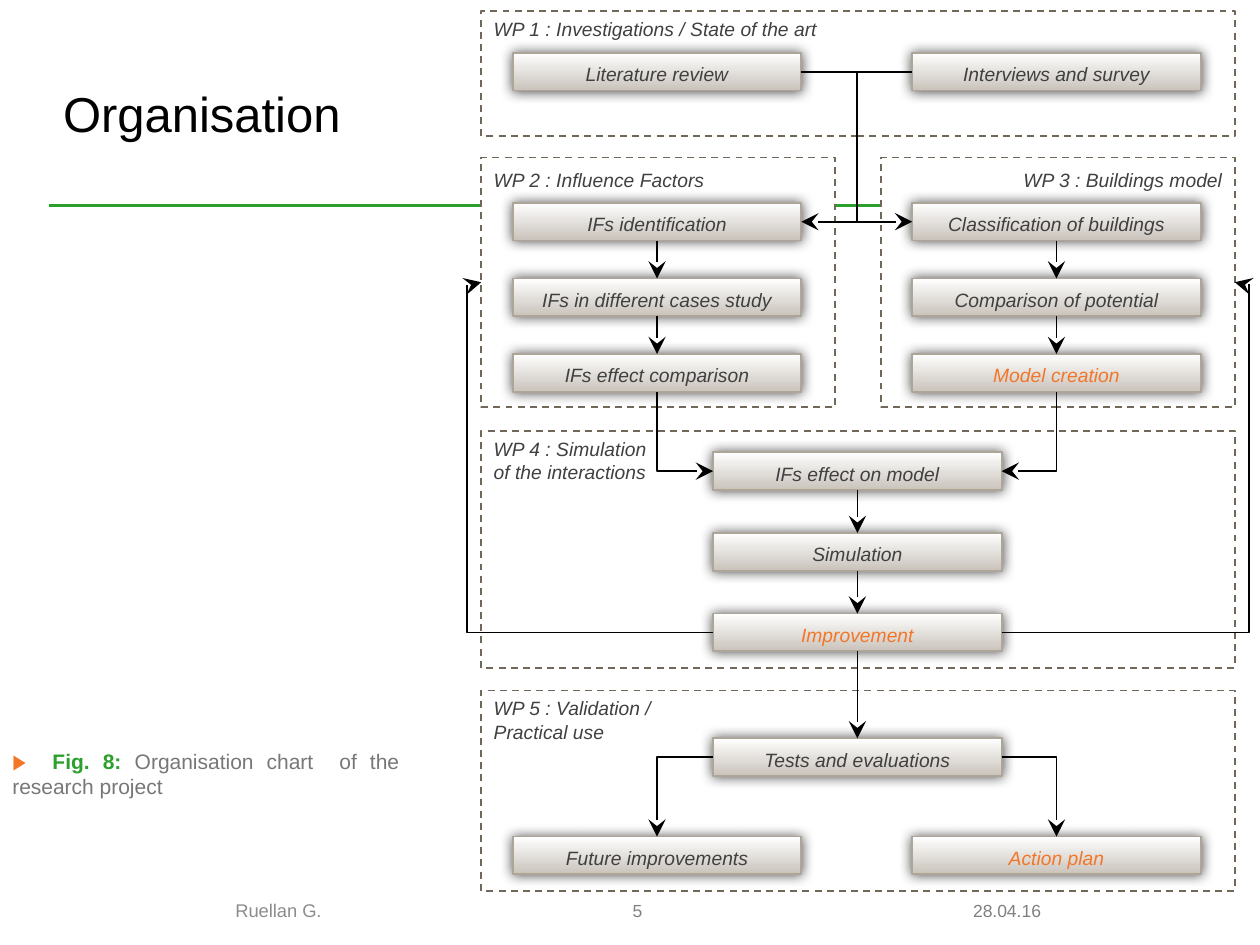
from lxml import etree
from pptx import Presentation
from pptx.dml.color import RGBColor
from pptx.enum.dml import MSO_LINE
from pptx.enum.shapes import MSO_CONNECTOR, MSO_SHAPE
from pptx.enum.text import MSO_ANCHOR, PP_ALIGN
from pptx.oxml.ns import qn
from pptx.util import Inches, Pt

STRAIGHT, ELBOW = MSO_CONNECTOR.STRAIGHT, MSO_CONNECTOR.ELBOW
RECT, DASH = MSO_SHAPE.RECTANGLE, MSO_LINE.DASH
TOP, MIDDLE = MSO_ANCHOR.TOP, MSO_ANCHOR.MIDDLE
LEFT, CENTER, RIGHT, JUSTIFY = (PP_ALIGN.LEFT, PP_ALIGN.CENTER,
                                PP_ALIGN.RIGHT, PP_ALIGN.JUSTIFY)
UP_SIDE, LEFT_SIDE, DOWN_SIDE, RIGHT_SIDE = range(4)

COLORS = {
    "black": "000000", "white": "FFFFFF", "text": "404040", "orange": "F37628",
    "green": "2CA02C", "frame": "71685A", "box edge": "ADA598",
    "box base": "C9C3BB", "footer": "808080", "author": "8C8C8C",
    "caption": "777777",
}
COLORS = {name: RGBColor.from_string(value) for name, value in COLORS.items()}

prs = Presentation()
prs.slide_width, prs.slide_height = Inches(10), Inches(7.5)
slide = prs.slides.add_slide(prs.slide_layouts[5])
shapes = slide.shapes


def write(paragraph, text, size, color, **formats):
    run = paragraph.add_run()
    run.text = text
    run.font.color.rgb = COLORS[color]
    for key, value in {"name": "Arial", "size": Pt(size), **formats}.items():
        setattr(run.font, key, value)


def connect(kind, begin, end, arrow="tailEnd", color="black", width=1,
            preset=None, bend=None):
    """Ends are (x, y) in inches, or (shape, side) to join a rectangle."""
    points = [(0, 0) if hasattr(p[0], "text_frame") else p for p in (begin, end)]
    link = shapes.add_connector(kind, *[Inches(v) for p in points for v in p])
    if hasattr(begin[0], "text_frame"):
        link.begin_connect(*begin)
    if hasattr(end[0], "text_frame"):
        link.end_connect(*end)
    link.line.color.rgb = COLORS[color]
    link.line.width = Pt(width)
    props = link._element.spPr
    geometry = props.find(qn("a:prstGeom"))
    if preset:
        geometry.set("prst", preset)
    if bend:
        guide = etree.SubElement(geometry.find(qn("a:avLst")), qn("a:gd"))
        guide.set("name", "adj1")
        guide.set("fmla", f"val {bend}")
    if arrow:
        tip = etree.SubElement(props.find(qn("a:ln")), qn("a:" + arrow))
        for key, value in {"type": "stealth", "w": "lg", "len": "lg"}.items():
            tip.set(key, value)
    etree.SubElement(props, qn("a:effectLst"))


# Title and the rule below it
title = shapes.title
title.left, title.top = Inches(0.5), Inches(0.3)
title.width, title.height = Inches(7.97), Inches(1.25)
frame = title.text_frame
for key in ("margin_left", "margin_top", "margin_right", "margin_bottom"):
    setattr(frame, key, 0)
frame.vertical_anchor = MIDDLE
frame.paragraphs[0].alignment = LEFT
frame.paragraphs[0].line_spacing = 0.88
write(frame.paragraphs[0], "Organisation", 28, "black")
connect(STRAIGHT, (0.39, 1.63), (9.65, 1.63), None, "green", 1.42)

# Footer and figure caption
CAPTION = [("▶  ", "orange", True), ("Fig. 8: ", "green", True),
           ("Organisation chart  of the research project", "caption", False)]
for x, y, w, h, align, size, runs in [
    (6.2, 7.09, 2.16, 0.28, RIGHT, 10, [("28.04.16", "footer", False)]),
    (3.98, 7.09, 2.16, 0.28, CENTER, 10, [("5", "footer", False)]),
    (1.77, 7.09, 2.34, 0.28, LEFT, 10.5, [("Ruellan G.", "author", False)]),
    (0, 5.89, 3.27, 0.5, JUSTIFY, 12, CAPTION),
]:
    note = shapes.add_textbox(*map(Inches, (x, y, w, h))).text_frame
    note.word_wrap = True
    note.paragraphs[0].alignment = align
    for text, color, bold in runs:
        write(note.paragraphs[0], text, size, color, bold=bold)

# Dashed work package frames
packages = {}
for number, x, y, w, h, align, spacing, lines in [
    (4, 3.82, 3.42, 5.98, 1.88, JUSTIFY, 1,
     ["WP 4 : Simulation", "of the interactions"]),
    (5, 3.82, 5.48, 5.98, 1.59, JUSTIFY, 1,
     ["WP 5 : Validation /", "Practical use"]),
    (3, 6.99, 1.25, 2.81, 1.98, RIGHT, 1.2, ["WP 3 : Buildings model"]),
    (2, 3.82, 1.25, 2.81, 1.98, LEFT, 1.2, ["WP 2 : Influence Factors"]),
    (1, 3.82, 0.09, 5.98, 0.99, LEFT, 1,
     ["WP 1 : Investigations / State of the art"]),
]:
    package = shapes.add_shape(RECT, *map(Inches, (x, y, w, h)))
    package.shadow.inherit = False
    package.fill.solid()
    package.fill.fore_color.rgb = COLORS["white"]
    package.line.color.rgb = COLORS["frame"]
    package.line.width = Pt(1)
    package.line.dash_style = DASH
    package.text_frame.vertical_anchor = TOP
    for i, line in enumerate(lines):
        heading = (package.text_frame.add_paragraph() if i
                   else package.text_frame.paragraphs[0])
        heading.alignment = align
        heading.line_spacing = spacing
        write(heading, line, 11, "text", italic=True)
    packages[number] = package

# Task boxes: three columns of equal width
COLUMNS = {"left": 4.07, "middle": 5.66, "right": 7.24}
BOX_W, BOX_H = 2.29, 0.3
HIGHLIGHTED = {"Improvement", "Action plan", "Model creation"}
tasks = {}
for column, y, text in [
    ("left", 0.42, "Literature review"),
    ("right", 0.42, "Interviews and survey"),
    ("left", 1.61, "IFs identification"),
    ("left", 2.21, "IFs in different cases study"),
    ("left", 2.81, "IFs effect comparison"),
    ("right", 1.61, "Classification of buildings"),
    ("right", 2.21, "Comparison of potential"),
    ("right", 2.81, "Model creation"),
    ("middle", 3.59, "IFs effect on model"),
    ("middle", 4.23, "Simulation"),
    ("middle", 4.87, "Improvement"),
    ("middle", 5.86, "Tests and evaluations"),
    ("left", 6.64, "Future improvements"),
    ("right", 6.64, "Action plan"),
]:
    task = shapes.add_shape(
        RECT, *map(Inches, (COLUMNS[column], y, BOX_W, BOX_H)))
    task.fill.gradient()
    task.fill.gradient_angle = 270
    for stop, position, color in zip(task.fill.gradient_stops, (0, 1),
                                     ("white", "box base")):
        stop.position = position
        stop.color.rgb = COLORS[color]
    task.line.color.rgb = COLORS["box edge"]
    task.line.width = Pt(1)
    # Soft dark halo
    task.shadow.inherit = False
    effects = task._element.spPr.find(qn("a:effectLst"))
    halo = etree.SubElement(effects, qn("a:outerShdw"), blurRad=str(Inches(0.1)),
                            dist="0", dir="0", algn="ctr", rotWithShape="0")
    shade = etree.SubElement(halo, qn("a:srgbClr"), val=str(COLORS["black"]))
    etree.SubElement(shade, qn("a:alpha"), val="70000")
    task.text_frame.vertical_anchor = MIDDLE
    label = task.text_frame.paragraphs[0]
    label.alignment = CENTER
    label.line_spacing = 1.2
    write(label, text, 11, "orange" if text in HIGHLIGHTED else "text",
          italic=True)
    tasks[text] = task

# Vertical steps inside and between packages
for chain in [
    ["IFs identification", "IFs in different cases study",
     "IFs effect comparison"],
    ["Classification of buildings", "Comparison of potential", "Model creation"],
    ["IFs effect on model", "Simulation", "Improvement",
     "Tests and evaluations"],
]:
    for upper, lower in zip(chain, chain[1:]):
        connect(STRAIGHT, (tasks[upper], DOWN_SIDE), (tasks[lower], UP_SIDE))

# Investigations feed both influence factors and buildings model
AXIS = 6.8
connect(STRAIGHT, (tasks["Literature review"], RIGHT_SIDE),
        (tasks["Interviews and survey"], LEFT_SIDE), None)
connect(STRAIGHT, (AXIS, 1.76), (tasks["IFs identification"], RIGHT_SIDE))
connect(ELBOW, (tasks["Classification of buildings"], LEFT_SIDE), (AXIS, 0.58),
        "headEnd", preset="bentConnector2")

# Single-corner links, running from the horizontal end
for begin, begin_side, end, end_side, arrow in [
    ("IFs effect on model", LEFT_SIDE, "IFs effect comparison", DOWN_SIDE,
     "headEnd"),
    ("IFs effect on model", RIGHT_SIDE, "Model creation", DOWN_SIDE, "headEnd"),
    ("Tests and evaluations", LEFT_SIDE, "Future improvements", UP_SIDE,
     "tailEnd"),
    ("Tests and evaluations", RIGHT_SIDE, "Action plan", UP_SIDE, "tailEnd"),
]:
    connect(ELBOW, (tasks[begin], begin_side), (tasks[end], end_side), arrow,
            preset="bentConnector2")

# Feedback loops from the improvement step
for side, number in [(LEFT_SIDE, 2), (RIGHT_SIDE, 3)]:
    connect(ELBOW, (tasks["Improvement"], side), (packages[number], side),
            bend=106000)

prs.save("out.pptx")
